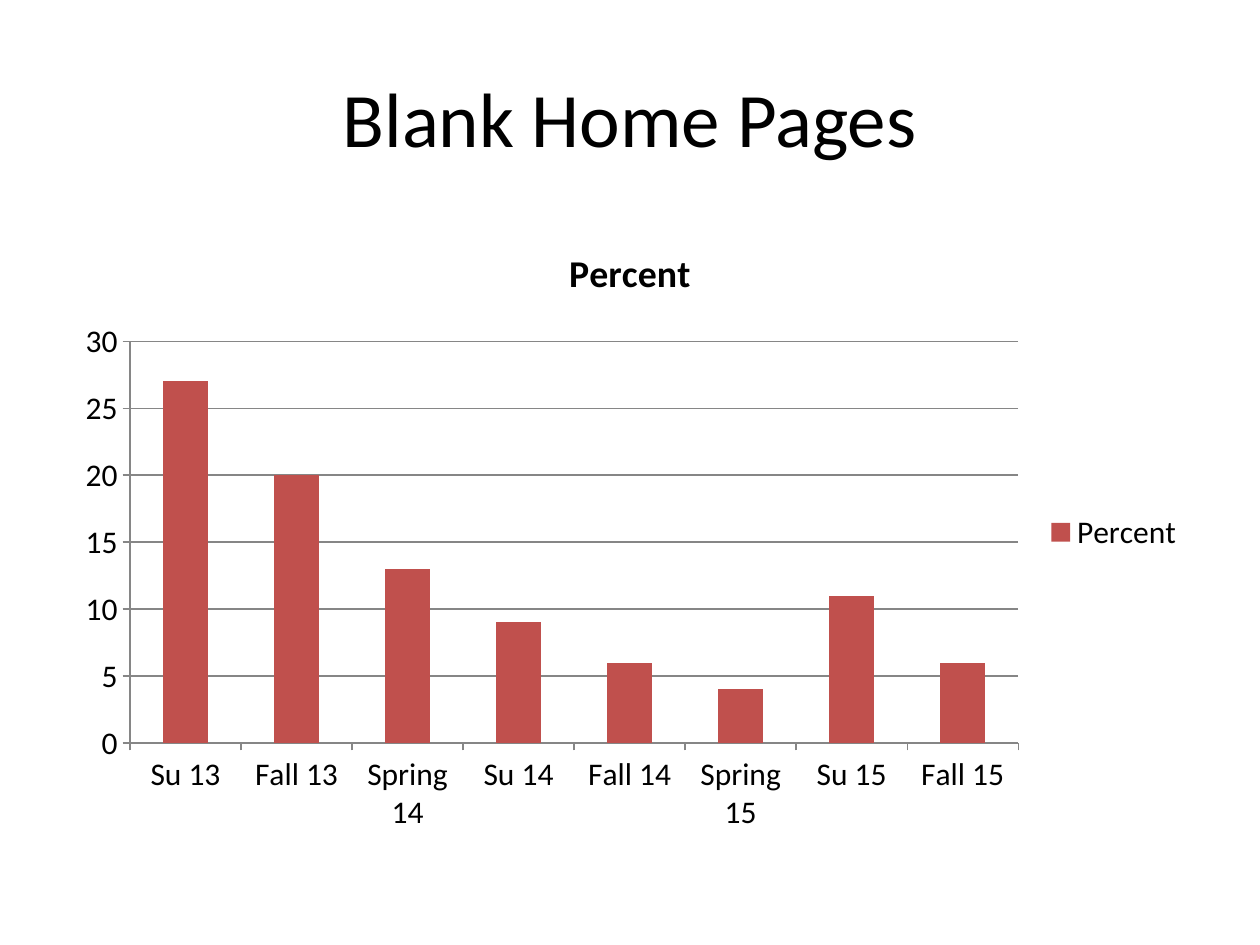
from dataclasses import dataclass

import pptx
import pptx.chart.data
import pptx.dml.color
import pptx.enum.chart
import pptx.enum.text
import pptx.util

PX = pptx.util.Inches(1) // 100  # lengths are given at 100 px to the inch


@dataclass(frozen=True)
class Theme:
    font: str = "Calibri"
    text: str = "000000"
    bar: str = "C0504D"
    axis: str = "868686"
    background: str = "FFFFFF"
    title_size: float = 44
    chart_title_size: float = 21.6
    label_size: float = 18
    line_width: float = 0.75


def rgb(value):
    return pptx.dml.color.RGBColor.from_string(value)


class SlideBuilder:
    def __init__(self, prs, theme):
        self.theme = theme
        self.s = prs.slides.add_slide(prs.slide_layouts[5])
        fill = self.s.background.fill
        fill.solid()
        fill.fore_color.rgb = rgb(theme.background)

    def style_font(self, font, size, bold=False):
        font.name = self.theme.font
        font.size = pptx.util.Pt(size)
        font.bold = bold
        font.color.rgb = rgb(self.theme.text)

    def style_line(self, line):
        line.color.rgb = rgb(self.theme.axis)
        line.width = pptx.util.Pt(self.theme.line_width)

    def title(self, text, x, y, w, h):
        sp = self.s.shapes.title
        sp.left, sp.top, sp.width, sp.height = (v * PX for v in (x, y, w, h))
        tf = sp.text_frame
        tf.text = text
        tf.vertical_anchor = pptx.enum.text.MSO_ANCHOR.MIDDLE
        p = tf.paragraphs[0]
        p.alignment = pptx.enum.text.PP_ALIGN.CENTER
        self.style_font(p.runs[0].font, self.theme.title_size)

    def column_chart(self, name, values, x, y, w, h, top, step):
        """Add a one-series column chart; values maps category to number."""
        data = pptx.chart.data.CategoryChartData()
        data.categories = list(values)
        data.add_series(name, list(values.values()))
        chart = self.s.shapes.add_chart(
            pptx.enum.chart.XL_CHART_TYPE.COLUMN_CLUSTERED,
            x * PX, y * PX, w * PX, h * PX, data).chart
        self.style_font(chart.font, self.theme.label_size)

        chart.has_title = True
        tf = chart.chart_title.text_frame
        tf.text = name
        self.style_font(tf.paragraphs[0].runs[0].font,
                        self.theme.chart_title_size, bold=True)
        chart.chart_title.include_in_layout = False

        chart.has_legend = True
        chart.legend.position = pptx.enum.chart.XL_LEGEND_POSITION.RIGHT
        chart.legend.include_in_layout = False

        plot = chart.plots[0]
        plot.gap_width = 150
        plot.vary_by_categories = False
        fill = plot.series[0].format.fill
        fill.solid()
        fill.fore_color.rgb = rgb(self.theme.bar)

        for axis in (chart.category_axis, chart.value_axis):
            axis.major_tick_mark = pptx.enum.chart.XL_TICK_MARK.OUTSIDE
            axis.minor_tick_mark = pptx.enum.chart.XL_TICK_MARK.NONE
            self.style_line(axis.format.line)
        axis = chart.value_axis
        axis.minimum_scale, axis.maximum_scale, axis.major_unit = 0, top, step
        axis.has_major_gridlines = True
        self.style_line(axis.major_gridlines.format.line)


def main():
    prs = pptx.Presentation()
    prs.slide_width, prs.slide_height = 1000 * PX, 750 * PX
    slide = SlideBuilder(prs, Theme())
    slide.title("Blank Home Pages", 50, 30, 900, 125)
    blank_pages = {
        "Su 13": 27, "Fall 13": 20, "Spring 14": 13, "Su 14": 9,
        "Fall 14": 6, "Spring 15": 4, "Su 15": 11, "Fall 15": 6,
    }
    slide.column_chart("Percent", blank_pages, 50, 175, 900, 495, top=30, step=5)
    prs.save("out.pptx")


if __name__ == "__main__":
    main()
